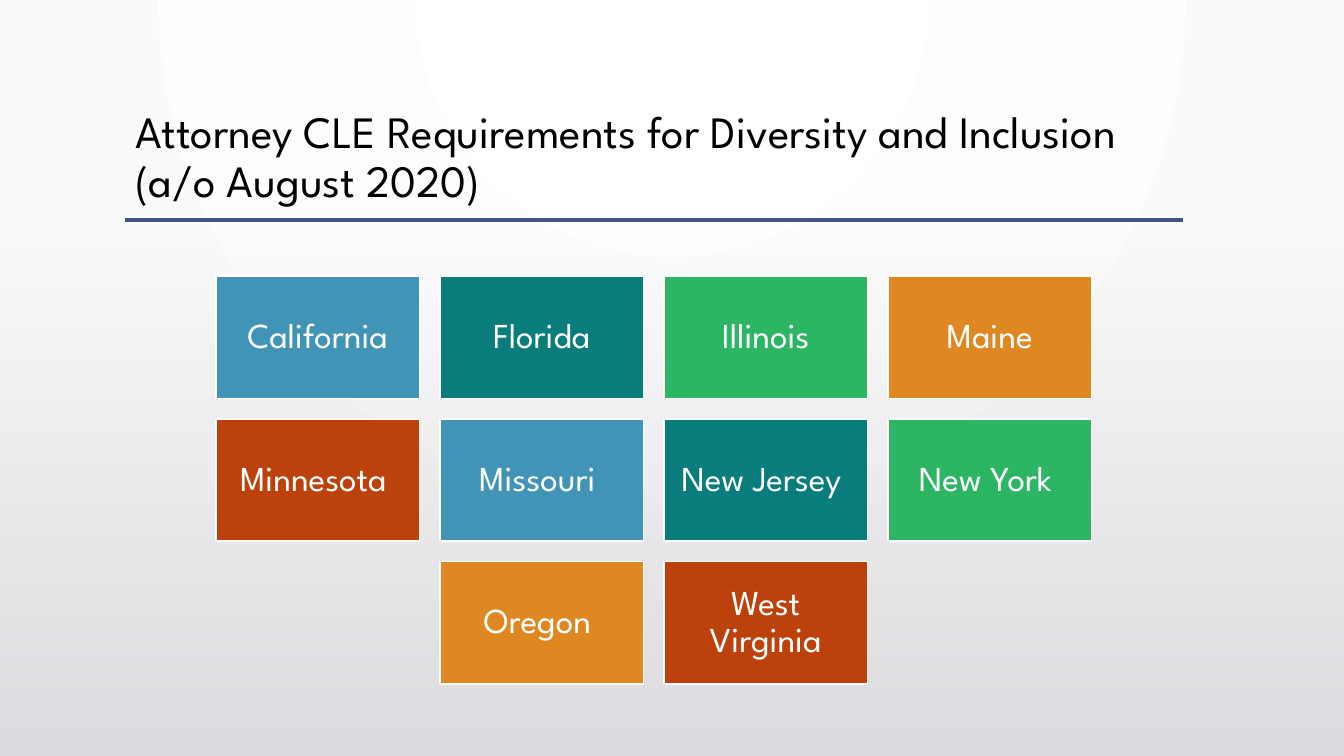
from dataclasses import dataclass

from pptx import Presentation
from pptx.dml.color import RGBColor
from pptx.dml.fill import FillFormat
from pptx.enum.shapes import MSO_CONNECTOR as Link, MSO_SHAPE as Form
from pptx.enum.text import MSO_ANCHOR as Anchor, MSO_AUTO_SIZE as Fit, PP_ALIGN as Align
from pptx.oxml import parse_xml
from pptx.oxml.ns import nsdecls, qn
from pptx.slide import Slide
from pptx.text.text import TextFrame
from pptx.util import Pt

FONT = "League Spartan"
BLACK = RGBColor(0x00, 0x00, 0x00)
WHITE = RGBColor(0xFF, 0xFF, 0xFF)
PALE = RGBColor(0xFA, 0xFA, 0xFA)
GREY = RGBColor(0xDC, 0xDC, 0xE0)
NAVY = RGBColor(0x41, 0x55, 0x88)
BLUE = RGBColor(0x42, 0x94, 0xB6)
TEAL = RGBColor(0x08, 0x7D, 0x7C)
GREEN = RGBColor(0x2C, 0xB6, 0x63)
AMBER = RGBColor(0xDF, 0x88, 0x22)
RUST = RGBColor(0xBC, 0x41, 0x0A)
HUES = [BLUE, TEAL, GREEN, AMBER, RUST]

WIDE, HIGH = 960, 540
LEFT, TOP = 154.1, 197.2
STEP_X, STEP_Y = 160, 101.9
TILE_W, TILE_H = 145.6, 87.4
COLS = 4
STATES = [
    "California", "Florida", "Illinois", "Maine",
    "Minnesota ", "Missouri ", "New Jersey ", "New York ",
    "Oregon ", "West Virginia",
]


@dataclass
class Tile:
    name: str
    x: float
    y: float
    hue: RGBColor


def blend(fill: FillFormat, first: RGBColor, last: RGBColor) -> None:
    fill.gradient()
    for stop, hue, place in zip(fill.gradient_stops, (first, last), (0, 1)):
        stop.color.rgb = hue
        stop.position = place


def write(frame: TextFrame, text: str, size: float, hue: RGBColor, align: Align) -> None:
    frame.word_wrap = True
    frame.auto_size = Fit.NONE
    para = frame.paragraphs[0]
    para.alignment = align
    para.line_spacing = 0.9
    run = para.add_run()
    run.text = text
    run.font.name = FONT
    run.font.size = Pt(size)
    run.font.color.rgb = hue


def draw_back(slide: Slide) -> None:
    fill = slide.background.fill
    blend(fill, WHITE, PALE)
    # Rings spread from the middle of the top edge
    grad = slide.element.find(".//" + qn("a:gradFill"))
    grad.replace(grad.find(qn("a:lin")), parse_xml(
        f'<a:path {nsdecls("a")} path="circle">'
        '<a:fillToRect l="43000" t="0" r="43000" b="100000"/></a:path>'))


def draw_head(slide: Slide) -> None:
    title = slide.shapes.title
    title.left, title.top = Pt(89.3), Pt(74.9)
    title.width, title.height = Pt(756), Pt(82.8)
    title.text_frame.vertical_anchor = Anchor.TOP
    write(title.text_frame,
          "Attorney CLE Requirements for Diversity and Inclusion (a/o August 2020)",
          32, BLACK, Align.LEFT)
    rule = slide.shapes.add_connector(
        Link.STRAIGHT, Pt(89.3), Pt(157), Pt(845.3), Pt(157))
    rule.line.color.rgb = NAVY
    rule.line.width = Pt(2.5)
    rule.element.spPr.append(parse_xml(f'<a:effectLst {nsdecls("a")}/>'))


def draw_shade(slide: Slide) -> None:
    top = 159.1
    shade = slide.shapes.add_shape(Form.RECTANGLE, 0, Pt(top), Pt(WIDE), Pt(HIGH - top))
    shade.shadow.inherit = False
    shade.line.fill.background()
    blend(shade.fill, GREY, GREY)
    shade.fill.gradient_angle = 270
    # The upper stop is fully clear
    clear = shade.element.find(".//" + qn("a:gs") + "/" + qn("a:srgbClr"))
    clear.append(parse_xml(f'<a:alpha {nsdecls("a")} val="0"/>'))


def draw_tile(slide: Slide, tile: Tile) -> None:
    box = slide.shapes.add_shape(
        Form.RECTANGLE, Pt(tile.x), Pt(tile.y), Pt(TILE_W), Pt(TILE_H))
    box.shadow.inherit = False
    box.fill.solid()
    box.fill.fore_color.rgb = tile.hue
    box.line.color.rgb = WHITE
    box.line.width = Pt(1.25)
    frame = box.text_frame
    frame.margin_left = frame.margin_right = Pt(7.2)
    frame.margin_top = frame.margin_bottom = Pt(7.2)
    frame.vertical_anchor = Anchor.MIDDLE
    write(frame, tile.name, 25, WHITE, Align.CENTER)


def lay_out(names: list[str]) -> list[Tile]:
    tiles = []
    for i, name in enumerate(names):
        row, col = divmod(i, COLS)
        # A short last row is centred
        count = min(COLS, len(names) - row * COLS)
        x = LEFT + (col + (COLS - count) / 2) * STEP_X
        tiles.append(Tile(name, x, TOP + row * STEP_Y, HUES[i % len(HUES)]))
    return tiles


def main() -> None:
    deck = Presentation()
    deck.slide_width, deck.slide_height = Pt(WIDE), Pt(HIGH)
    slide = deck.slides.add_slide(deck.slide_layouts[5])
    # Backdrop and heading
    draw_back(slide)
    draw_head(slide)
    draw_shade(slide)
    # Grid of states
    for tile in lay_out(STATES):
        draw_tile(slide, tile)
    deck.save("out.pptx")


if __name__ == "__main__":
    main()
